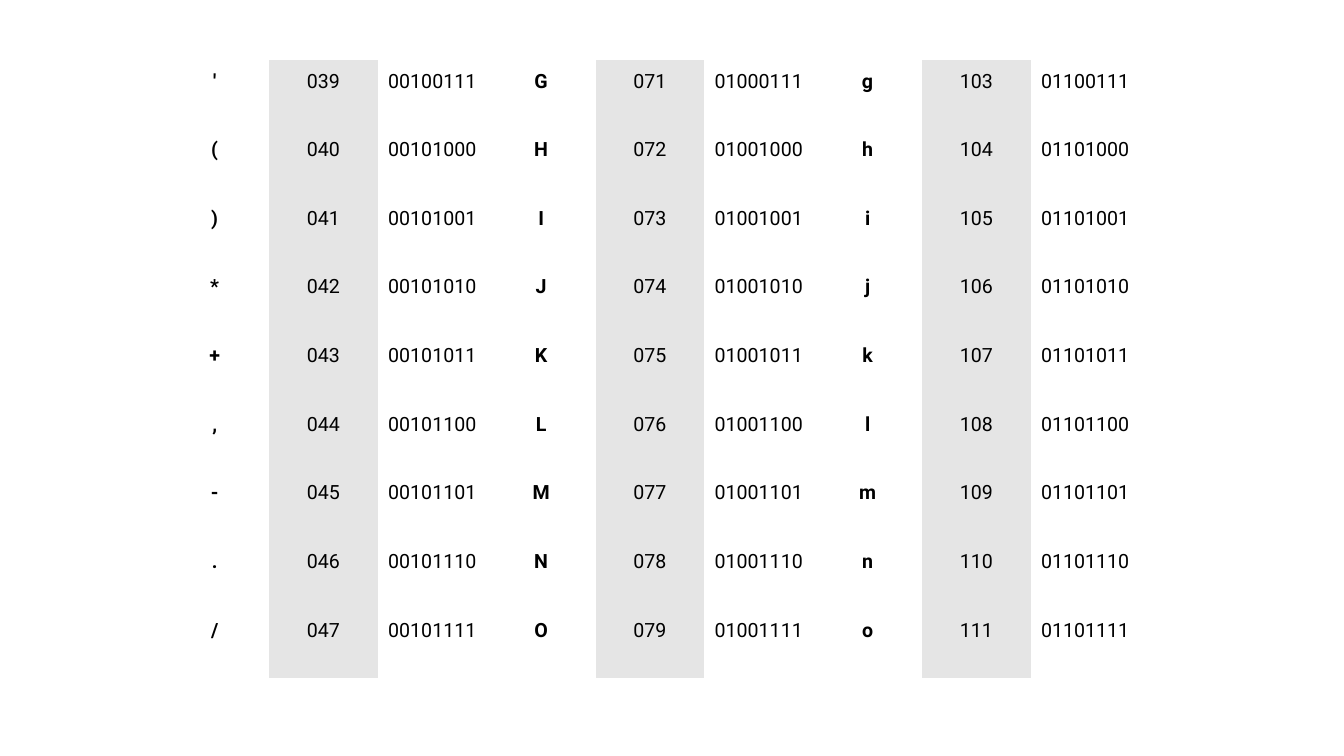
from pptx import Presentation
from pptx import util as u
from pptx.dml.color import RGBColor
from pptx.enum import text

COLORS = {"ink": "000000", "plain": "FFFFFF", "shaded": "E5E5E5"}
NO_GRID_STYLE = "{2D5ABB26-0587-4C30-8999-92F81FD0307C}"

FIRST_CODES = (39, 71, 103)  # first character code of each column group
CODE_ROWS = 9
TABLE_BOX = (114.5, 42.6, 699.75, 441.36)  # left, top, width, height

CELL_FORMAT = {
    "margin_left": u.Pt(7.2),
    "margin_right": u.Pt(7.2),
    "margin_top": u.Pt(7.2),
    "margin_bottom": u.Pt(7.2),
    "vertical_anchor": text.MSO_ANCHOR.TOP,
}
FONT_FORMAT = {"name": "Roboto", "size": u.Pt(14)}
TABLE_FORMAT = {"first_row": False, "horz_banding": False}


def apply_format(target, values):
    for attribute, value in values.items():
        setattr(target, attribute, value)


def fill_cell(cell, label, fill, bold):
    apply_format(cell, CELL_FORMAT)
    cell.fill.solid()
    cell.fill.fore_color.rgb = RGBColor.from_string(COLORS[fill])
    paragraph = cell.text_frame.paragraphs[0]
    paragraph.alignment = text.PP_ALIGN.CENTER
    run = paragraph.add_run()
    run.text = label
    apply_format(run.font, {**FONT_FORMAT, "bold": bold})
    run.font.color.rgb = RGBColor.from_string(COLORS["ink"])


def add_code_table(slide, box):
    left, top, width, height = box
    column_count = 3 * len(FIRST_CODES)
    frame = slide.shapes.add_table(
        CODE_ROWS, column_count,
        u.Pt(left), u.Pt(top), u.Pt(width), u.Pt(height))
    codes = frame.table
    apply_format(codes, TABLE_FORMAT)
    # Style without borders, so the shaded columns run unbroken
    codes._tbl.tblPr.find("{*}tableStyleId").text = NO_GRID_STYLE

    for column in codes.columns:
        column.width = u.Pt(width / column_count)
    for row in codes.rows:
        row.height = u.Pt(height / CODE_ROWS)

    # Each group: character, decimal code, binary code
    for group, first_code in enumerate(FIRST_CODES):
        for row in range(CODE_ROWS):
            code = first_code + row
            parts = (
                (chr(code), "plain", True),
                (f"{code:03d}", "shaded", False),
                (f"{code:08b}", "plain", False),
            )
            for offset, part in enumerate(parts):
                fill_cell(codes.cell(row, 3 * group + offset), *part)


def main():
    deck = Presentation()
    deck.slide_width, deck.slide_height = u.Pt(960), u.Pt(540)
    slide = deck.slides.add_slide(deck.slide_layouts[6])
    add_code_table(slide, TABLE_BOX)
    deck.save("out.pptx")


if __name__ == "__main__":
    main()
